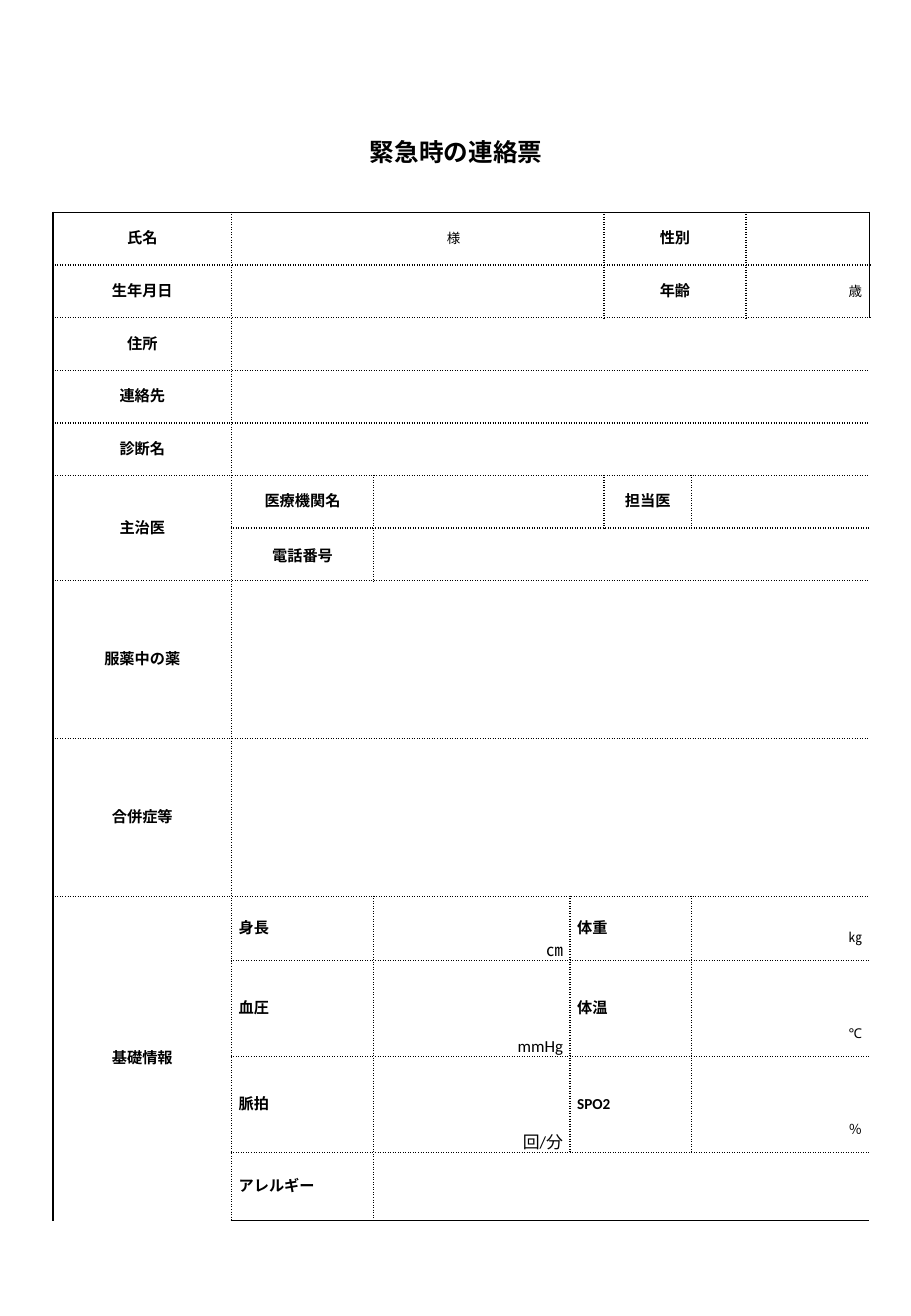
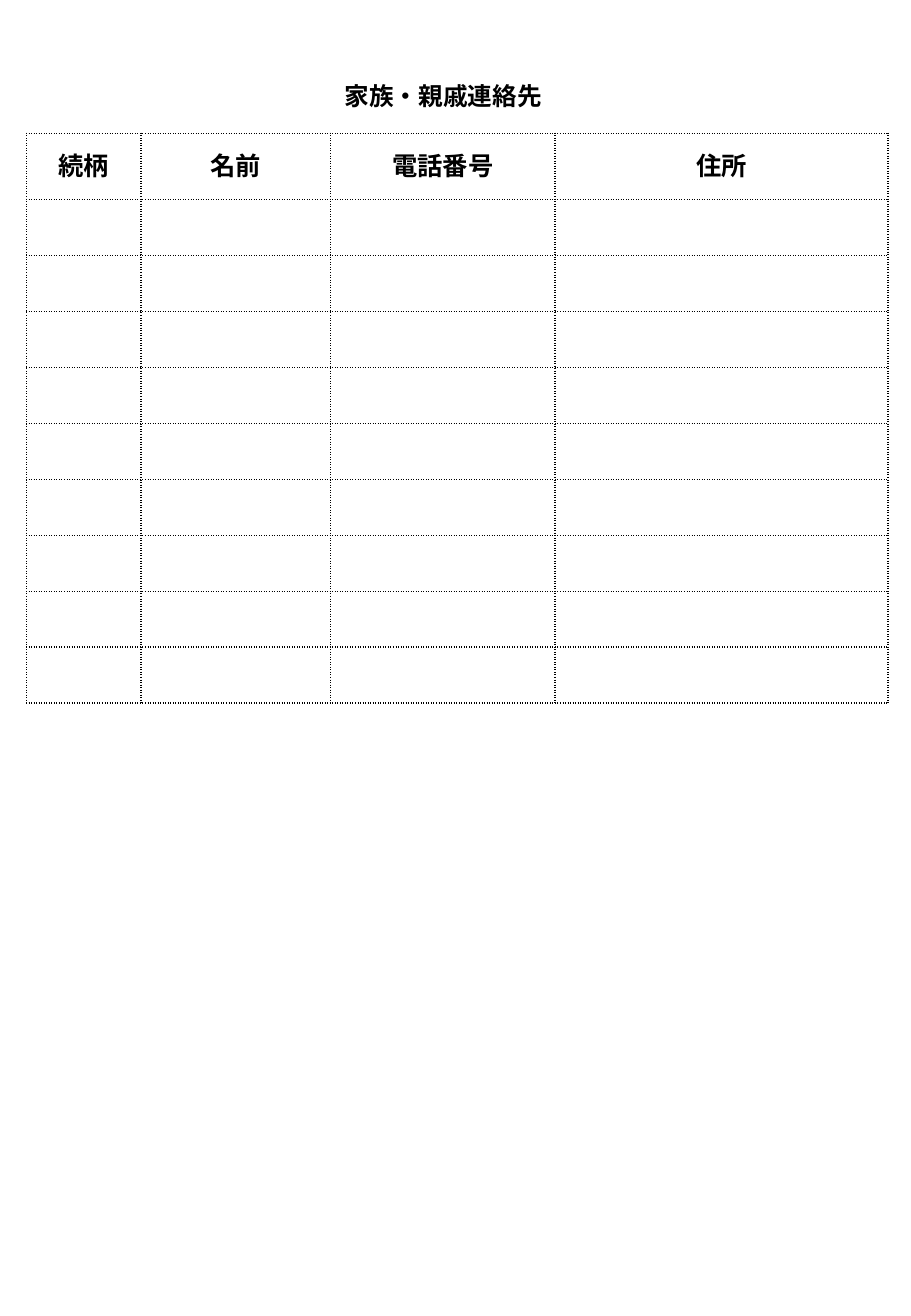
import collections

import lxml.etree
import pptx
import pptx.dml.color
import pptx.enum.lang
import pptx.enum.text
import pptx.oxml.ns
import pptx.util

Cm = pptx.util.Cm
Pt = pptx.util.Pt
ALIGN = pptx.enum.text.PP_ALIGN
ANCHOR = pptx.enum.text.MSO_ANCHOR
qn = pptx.oxml.ns.qn

COLORS = {"ink": "000000"}
FONT = "Calibri"
FONT_CJK = "Noto Sans CJK JP"
NO_STYLE = "{2D5ABB26-0587-4C30-8999-92F81FD0307C}"

Style = collections.namedtuple(
    "Style", "size bold align anchor side top right bottom font",
    defaults=(0.15, 0, 0.15, 0, FONT))
LABEL = Style(9, True, ALIGN.CENTER, ANCHOR.MIDDLE)
PHONE = LABEL._replace(font=FONT_CJK)
ITEM = LABEL._replace(align=ALIGN.LEFT)
SUFFIX = Style(8, False, ALIGN.RIGHT, ANCHOR.MIDDLE)
HONORIFIC = SUFFIX._replace(right=3)
UNIT = Style(10, False, ALIGN.RIGHT, ANCHOR.BOTTOM)
RAISED_UNIT = UNIT._replace(size=8, bottom=0.31)
HEADER = Style(15, True, ALIGN.CENTER, ANCHOR.MIDDLE, 0.2, 0.1, 0.2, 0.1)

Field = collections.namedtuple("Field", "text style cols rows", defaults=("", LABEL, 1, 1))


def wide_row(label):
    return [Field(label), Field(cols=6)]


def vitals_row(left, left_unit, right, right_unit):
    return [Field(left, ITEM), Field(left_unit, UNIT), Field(right, ITEM, 2),
            Field(right_unit, RAISED_UNIT, 2)]


FORM_COLS = [3.73, 2.97, 4.11, 0.71, 1.83, 1.14, 2.58]
FORM_ROWS = [1.1] * 7 + [3.3] * 2 + [1.34, 2.01, 2.01, 1.42]
FORM = [
    [Field("氏名"), Field("様", HONORIFIC, 3), Field("性別", cols=2), Field()],
    [Field("生年月日"), Field(cols=3), Field("年齢", cols=2), Field("歳", SUFFIX)],
    wide_row("住所"),
    wide_row("連絡先"),
    wide_row("診断名"),
    [Field("主治医", rows=2), Field("医療機関名"), Field(cols=2), Field("担当医"), Field(cols=2)],
    [Field("電話番号", PHONE), Field(cols=5)],
    wide_row("服薬中の薬"),
    wide_row("合併症等"),
    [Field("基礎情報", rows=4)] + vitals_row("身長", "㎝", "体重", "㎏"),
    vitals_row("血圧", "mmHg", "体温", "℃"),
    vitals_row("脈拍", "回/分", "SPO2", "％"),
    [Field("アレルギー", ITEM), Field(cols=5)],
]

FAMILY_COLS = [2.39, 3.96, 4.7, 6.96]
FAMILY_ROWS = [1.38] + [1.17] * 9
FAMILY = [[Field(text, HEADER) for text in ("続柄", "名前", "電話番号", "住所")]]
FAMILY += [[Field(style=HEADER)] * len(FAMILY_COLS)] * 9


def format_runs(p, size, bold, font=FONT):
    for r in p.runs:
        r.font.size = Pt(size)
        r.font.bold = bold
        r.font.name = font
        r.font.language_id = pptx.enum.lang.MSO_LANGUAGE_ID.JAPANESE
        r.font.color.rgb = pptx.dml.color.RGBColor.from_string(COLORS["ink"])
        ea = lxml.etree.Element(qn("a:ea"), typeface=font)
        r.font._element.find(qn("a:latin")).addnext(ea)


def add_title(slide, text, left, top):
    sp = slide.shapes.add_textbox(Cm(left), Cm(top), Cm(10.64), Cm(0.89))
    tf = sp.text_frame
    tf.word_wrap = True
    p = tf.paragraphs[0]
    p.text = text
    p.alignment = ALIGN.CENTER
    format_runs(p, 14.6, True)


def add_border(cell, side, dash):
    ln = lxml.etree.SubElement(cell._tc.get_or_add_tcPr(), qn("a:" + side), w=str(Pt(1)))
    fill = lxml.etree.SubElement(ln, qn("a:solidFill"))
    lxml.etree.SubElement(fill, qn("a:srgbClr"), val=COLORS["ink"])
    lxml.etree.SubElement(ln, qn("a:prstDash"), val=dash)


def fill_cell(cell, text, style):
    cell.margin_left, cell.margin_right = Cm(style.side), Cm(style.right)
    cell.margin_top, cell.margin_bottom = Cm(style.top), Cm(style.bottom)
    cell.vertical_anchor = style.anchor
    p = cell.text_frame.paragraphs[0]
    p.text = text
    p.alignment = style.align
    format_runs(p, style.size, style.bold, style.font)


def draw_field(table, row, col, field, frame):
    bottom, right = row + field.rows - 1, col + field.cols - 1
    last_row, last_col = len(table.rows) - 1, len(table.columns) - 1
    origin = table.cell(row, col)
    if (bottom, right) != (row, col):
        origin.merge(table.cell(bottom, right))
    fill_cell(origin, field.text, field.style)
    for y in range(row, bottom + 1):
        for x in range(col, right + 1):
            cell = table.cell(y, x)
            edges = (("lnL", x, col, 0), ("lnR", x, right, last_col),
                     ("lnT", y, row, 0), ("lnB", y, bottom, last_row))
            for side, place, field_edge, table_edge in edges:
                if place == field_edge:
                    add_border(cell, side, frame if place == table_edge else "sysDot")
            cell.fill.background()


def add_form(slide, left, top, widths, heights, rows, frame):
    table = slide.shapes.add_table(len(heights), len(widths), Cm(left), Cm(top),
                                   Cm(sum(widths)), Cm(sum(heights))).table
    table.first_row = table.horz_banding = False
    table._tbl.tblPr.find(qn("a:tableStyleId")).text = NO_STYLE
    for column, width in zip(table.columns, widths):
        column.width = Cm(width)
    for row, height in zip(table.rows, heights):
        row.height = Cm(height)
    for y, fields in enumerate(rows):
        x = 0
        for field in fields:
            while table.cell(y, x).is_spanned:
                x += 1
            draw_field(table, y, x, field, frame)
            x += field.cols


def main():
    prs = pptx.Presentation()
    prs.slide_width, prs.slide_height = Cm(19.05), Cm(27.51)
    blank = prs.slide_layouts[6]

    s = prs.slides.add_slide(blank)
    add_form(s, 1.11, 4.44, FORM_COLS, FORM_ROWS, FORM, "solid")
    add_title(s, "緊急時の連絡票", 4.22, 2.74)

    s = prs.slides.add_slide(blank)
    add_title(s, "家族・親戚連絡先", 3.95, 1.57)
    add_form(s, 0.56, 2.79, FAMILY_COLS, FAMILY_ROWS, FAMILY, "sysDot")

    prs.save("out.pptx")


if __name__ == "__main__":
    main()
